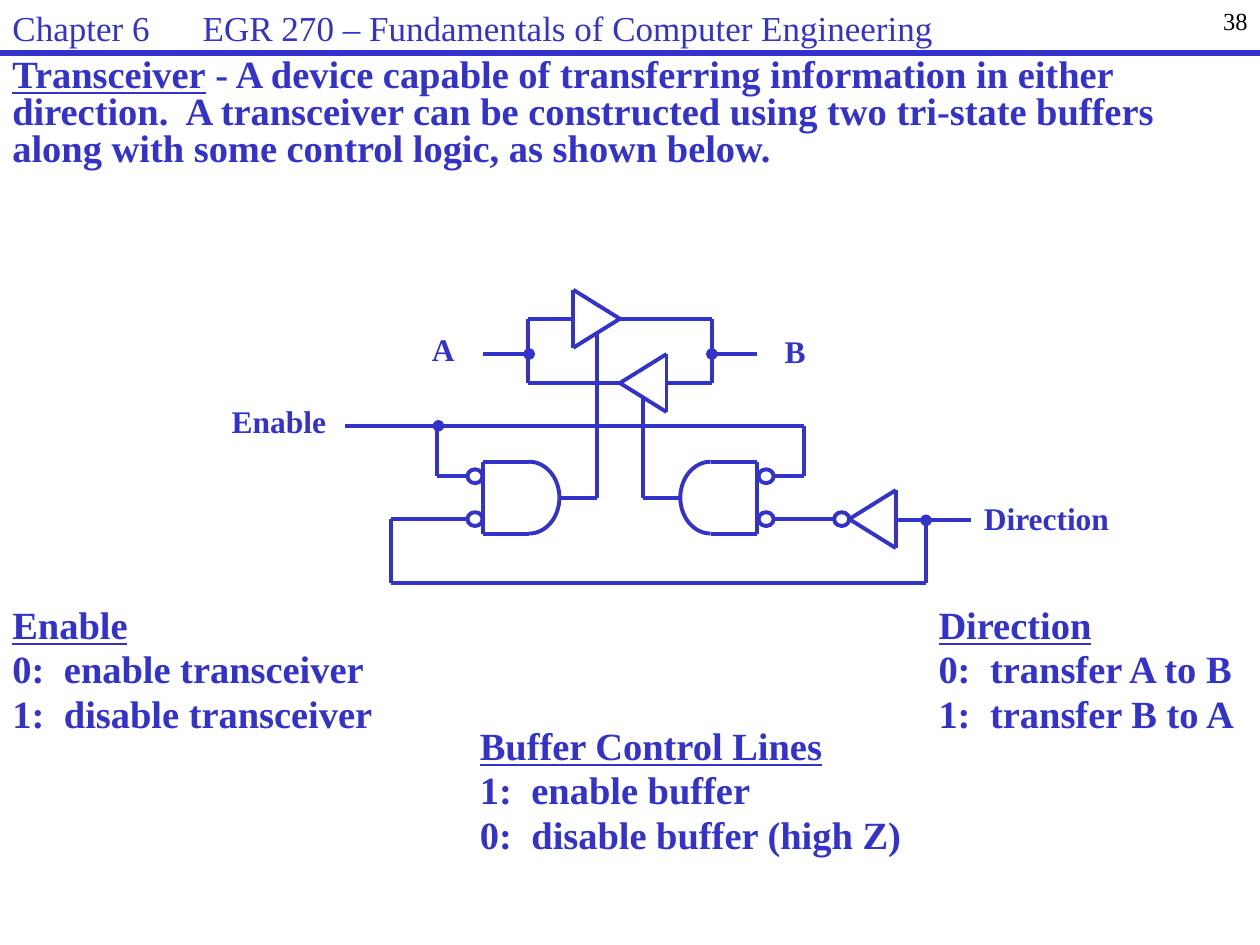
from math import cos, pi, sin

from lxml.etree import SubElement
from pptx import Presentation
from pptx.dml.color import RGBColor
from pptx.enum.shapes import MSO_CONNECTOR, MSO_SHAPE
from pptx.enum.text import PP_ALIGN
from pptx.oxml.ns import qn
from pptx.util import Inches, Pt

BLUE = RGBColor(0x33, 0x33, 0xCC)
WHITE = RGBColor(0xFF, 0xFF, 0xFF)
BLACK = RGBColor(0, 0, 0)
BASE = {"name": "Times New Roman", "size": Pt(22), "bold": True}
TIGHT = {"line_spacing": 0.8, "space_before": Pt(4.4)}


def set_all(target, values):
    """Set every attribute named in a dict."""
    for name, value in values.items():
        setattr(target, name, value)


def add_text(s, box, paragraphs, font=None, para=TIGHT, color=BLUE, tab=None):
    """Write paragraphs, each a list of (text, underline) runs, into a box."""
    tf = s.shapes.add_textbox(*map(Inches, box)).text_frame
    tf.word_wrap = True
    for i, runs in enumerate(paragraphs):
        p = tf.paragraphs[0] if i == 0 else tf.add_paragraph()
        set_all(p, para)
        if tab:
            stops = SubElement(p._p.get_or_add_pPr(), qn("a:tabLst"))
            SubElement(stops, qn("a:tab"), pos=str(Inches(tab)), algn="l")
        for text, underline in runs:
            r = p.add_run()
            r.text = text
            set_all(r.font, {**BASE, **(font or {}), "underline": underline})
            r.font.color.rgb = color


def add_line(s, start, end, width=2.25):
    """Draw a straight blue line between two points."""
    line = s.shapes.add_connector(MSO_CONNECTOR.STRAIGHT, *map(Inches, (*start, *end)))
    line.line.color.rgb = BLUE
    line.line.width = Pt(width)
    SubElement(line._element.spPr, qn("a:effectLst"))


def add_wire(s, *points):
    """Join successive points with lines."""
    for start, end in zip(points, points[1:]):
        add_line(s, start, end)


def add_circle(s, center, size, fill):
    """Draw an inversion bubble or a junction dot around its center."""
    (x, y), (w, h) = center, size
    sp = s.shapes.add_shape(MSO_SHAPE.OVAL, *map(Inches, (x - w / 2, y - h / 2, w, h)))
    sp.shadow.inherit = False
    sp.fill.solid()
    sp.fill.fore_color.rgb = fill
    sp.line.color.rgb = BLUE
    sp.line.width = Pt(2.25)


def add_buffer(s, tip, side):
    """Draw a buffer triangle whose base lies to the given side of its tip."""
    x, y = tip
    base = x + side * 0.37
    add_wire(s, tip, (base, y - 0.23), (base, y + 0.23), tip)


def add_quarter_arc(s, center, rx, ry, steps=16):
    """Draw a quarter ellipse from the horizontal to the vertical axis."""
    x, y = center
    points = [(Inches(x + rx * cos(i * pi / 2 / steps)),
               Inches(y + ry * sin(i * pi / 2 / steps))) for i in range(steps + 1)]
    builder = s.shapes.build_freeform(*points[0])
    builder.add_line_segments(points[1:], close=False)
    sp = builder.convert_to_shape()
    sp.shadow.inherit = False
    sp.fill.background()
    sp.line.color.rgb = BLUE
    sp.line.width = Pt(2.25)


def add_and_gate(s, back, side):
    """Draw an AND gate that points to the given side of its back."""
    x, y = back
    bend, half = x + side * 0.37, 0.285
    add_wire(s, (bend, y - half), (x, y - half), (x, y + half), (bend, y + half))
    for ry in (-half, half):
        add_quarter_arc(s, (bend, y), side * 0.24, ry)


def add_circuit(s, box):
    """Draw the transceiver logic within a box."""
    left, top, width, height = box

    def at(x, y):
        return left + x, top + y

    wires = [
        [(1.82, 0.23), (1.45, 0.23), (1.45, 0.74), (2.18, 0.74)],
        [(2.18, 0.23), (2.91, 0.23), (2.91, 0.74), (2.55, 0.74)],
        [(1.09, 0.51), (1.45, 0.51)],
        [(2.91, 0.51), (3.27, 0.51)],
        [(2, 0.34), (2, 1.65), (1.7, 1.65)],
        [(2.36, 0.85), (2.36, 1.65), (2.67, 1.65)],
        [(0, 1.08), (3.64, 1.08), (3.64, 1.48), (3.27, 1.48)],
        [(0.73, 1.08), (0.73, 1.48), (1.09, 1.48)],
        [(3.27, 1.82), (4, 1.82)],
        [(4.37, 1.83), (width, 1.83)],
        [(4.61, 1.83), (4.61, height), (0.36, height), (0.36, 1.82), (1.09, 1.82)],
    ]
    for points in wires:
        add_wire(s, *(at(*point) for point in points))
    for x, y, side in ((2.18, 0.23, -1), (2.18, 0.74, 1), (4, 1.82, 1)):
        add_buffer(s, at(x, y), side)
    for x, side in ((1.09, 1), (3.27, -1)):
        add_and_gate(s, at(x, 1.65), side)
    for x, y in ((1.03, 1.48), (1.03, 1.82), (3.34, 1.48), (3.34, 1.82), (3.94, 1.82)):
        add_circle(s, at(x, y), (0.12, 0.11), WHITE)
    for x, y in ((0.74, 1.08), (1.46, 0.51), (2.91, 0.51), (4.61, 1.83)):
        add_circle(s, at(x, y), (0.06, 0.06), BLUE)
    for name, x, y, w in (("A", 0.59, 0.33, 0.5), ("B", 3.39, 0.34, 0.5),
                          ("Enable", -1, 0.9, 1), ("Direction", 4.97, 1.67, 1.54)):
        add_text(s, (*at(x, y), w, 0.38), [[(name, False)]], {"size": Pt(18)},
                 {**TIGHT, "space_before": Pt(3.6)})


def add_header(s, box):
    """Place the course title, page number and rule within a box."""
    left, top, width, height = box
    plain = {"bold": False, "size": Pt(20)}
    add_text(s, (left, top, width - 0.75, height),
             [[("Chapter 6\tEGR 270 – Fundamentals of Computer Engineering", False)]],
             plain, {"space_before": Pt(4)}, tab=1.51)
    add_text(s, (left + width - 0.67, top, 0.67, height), [[("38", False)]],
             {**plain, "size": Pt(14)}, {"alignment": PP_ALIGN.RIGHT}, BLACK)
    add_line(s, (left, top + height), (left + width, top + height), 3)


def add_key(s, box, title, *rows):
    """List the meaning of each value of a signal under its title."""
    lines = [[(title, True)]]
    lines += [[(f"{value}:\t{meaning}", False)] for value, meaning in rows]
    add_text(s, box, lines, tab=0.41)


def main():
    """Build the transceiver slide."""
    prs = Presentation()
    prs.slide_width, prs.slide_height = Inches(10), Inches(7.5)
    s = prs.slides.add_slide(prs.slide_layouts[6])
    add_text(s, (0, 0.42, 10, 1), [[
        ("Transceiver", True),
        (" - A device capable of transferring information in either direction.  "
         "A transceiver can be constructed using two tri-state buffers along with "
         "some control logic, as shown below.", False)]])
    add_circuit(s, (2.74, 2.3, 4.97, 2.33))
    add_key(s, (0, 4.79, 3.86, 1.17), "Enable",
            (0, "enable transceiver"), (1, "disable transceiver"))
    add_key(s, (7.35, 4.79, 2.65, 1.17), "Direction",
            (0, "transfer A to B"), (1, "transfer B to A"))
    add_key(s, (3.71, 5.75, 3.56, 1.12), "Buffer Control Lines",
            (1, "enable buffer"), (0, "disable buffer (high Z)"))
    add_header(s, (0, 0, 10, 0.42))
    prs.save("out.pptx")


if __name__ == "__main__":
    main()
